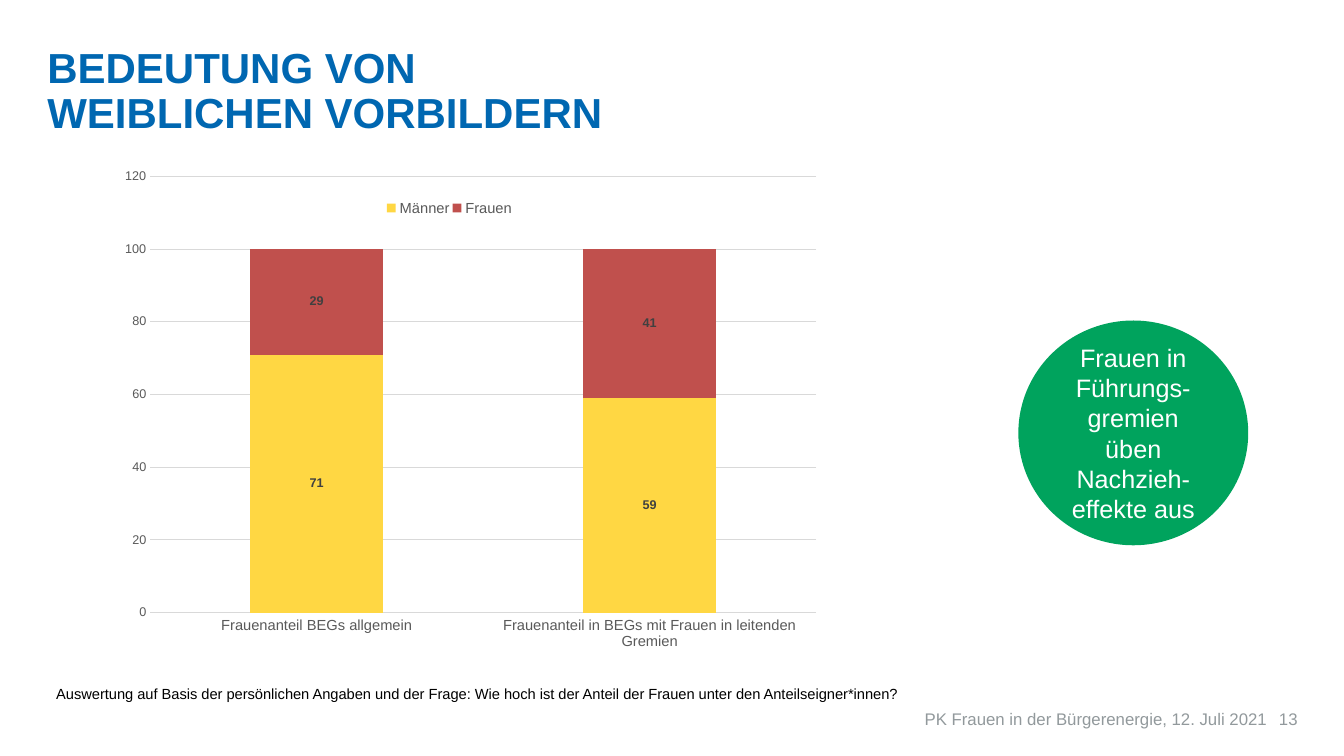
from lxml import etree
from pptx import Presentation
from pptx.chart.data import CategoryChartData
from pptx.dml.color import RGBColor
from pptx.enum import chart as charts, shapes, text
from pptx.oxml import ns
from pptx.util import Inches, Pt

BLUE = RGBColor(0x00, 0x67, 0xB1)
GREEN = RGBColor(0x00, 0xA3, 0x5D)
YELLOW = RGBColor(0xFF, 0xD7, 0x43)
RED = RGBColor(0xC0, 0x50, 0x4D)
BLACK = RGBColor(0x00, 0x00, 0x00)
WHITE = RGBColor(0xFF, 0xFF, 0xFF)
FOOTER_GREY = RGBColor(0x92, 0x99, 0x9C)
AXIS_GREY = RGBColor(0x59, 0x59, 0x59)
LABEL_GREY = RGBColor(0x40, 0x40, 0x40)
GRID_GREY = RGBColor(0xD9, 0xD9, 0xD9)

FONT = "Arial"
LEFT, CENTER, RIGHT = text.PP_ALIGN.LEFT, text.PP_ALIGN.CENTER, text.PP_ALIGN.RIGHT


def set_font(font, size, color, bold=False):
    for name, value in {"name": FONT, "size": Pt(size), "bold": bold}.items():
        setattr(font, name, value)
    font.color.rgb = color


def set_frame(frame, **values):
    for name, value in values.items():
        setattr(frame, name, value)


def write(frame, words, size, color, bold=False, align=LEFT):
    para = frame.paragraphs[0]
    para.text = words
    para.alignment = align
    for span in para.runs:
        set_font(span.font, size, color, bold)
    return para


def add_text(page, box, words, size, color, inset=True, **style):
    frame = page.shapes.add_textbox(*map(Inches, box)).text_frame
    frame.word_wrap = True
    if not inset:
        set_frame(frame, margin_left=0, margin_top=0, margin_right=0, margin_bottom=0)
    return frame, write(frame, words, size, color, **style)


def add_title(page, box):
    frame, para = add_text(page, box, "BEDEUTUNG VON \vWEIBLICHEN VORBILDERN",
                           30, BLUE, inset=False, bold=True)
    frame.vertical_anchor = text.MSO_ANCHOR.BOTTOM
    para.line_spacing = Pt(32)


def place_part(part, index, chart_box, box, inner=False):
    """Fix a chart part at a box given in inches inside the chart."""
    for old in part.findall(ns.qn("c:layout")):
        part.remove(old)
    layout = etree.Element(ns.qn("c:layout"))
    manual = etree.SubElement(layout, ns.qn("c:manualLayout"))
    settings = [("layoutTarget", "inner")] if inner else []
    settings += [("xMode", "edge"), ("yMode", "edge")]
    width, height = chart_box[2:]
    settings += [(key, f"{length / whole:.4f}") for key, length, whole
                 in zip("xywh", box, (width, height, width, height))]
    for tag, value in settings:
        etree.SubElement(manual, ns.qn(f"c:{tag}")).set("val", value)
    part.insert(index, layout)


def add_share_chart(page, box):
    data = CategoryChartData()
    data.categories = ["Frauenanteil BEGs allgemein",
                       "Frauenanteil in BEGs mit Frauen in leitenden Gremien"]
    data.add_series("Männer", (71, 59))
    data.add_series("Frauen", (29, 41))
    chart = page.shapes.add_chart(charts.XL_CHART_TYPE.COLUMN_STACKED,
                                  *map(Inches, box), data).chart
    set_font(chart.font, 10, BLACK)
    chart.has_title = False

    # Columns and value labels
    plot = chart.plots[0]
    set_frame(plot, gap_width=150, overlap=100, vary_by_categories=False)
    for series, color in zip(plot.series, (YELLOW, RED)):
        series.format.fill.solid()
        series.format.fill.fore_color.rgb = color
        series.data_labels.show_value = True
        set_font(series.data_labels.font, 9, LABEL_GREY, bold=True)

    # Axes and grid
    names, scale = chart.category_axis, chart.value_axis
    for axis, size in ((names, 10.5), (scale, 9)):
        axis.major_tick_mark = axis.minor_tick_mark = charts.XL_TICK_MARK.NONE
        set_font(axis.tick_labels.font, size, AXIS_GREY)
    set_frame(scale, minimum_scale=0, maximum_scale=120, major_unit=20,
              has_major_gridlines=True)
    scale.format.line.fill.background()
    for line in (names.format.line, scale.major_gridlines.format.line):
        line.color.rgb = GRID_GREY
        line.width = Pt(0.75)

    # Legend inside the plot
    chart.has_legend = True
    legend = chart.legend
    legend.position = charts.XL_LEGEND_POSITION.BOTTOM
    legend.include_in_layout = False
    set_font(legend.font, 10.5, AXIS_GREY)

    area = plot._element.getparent()
    place_part(area, 0, box, (0.3, 0.09, 6.61, 4.35), inner=True)
    place_part(legend._element, 1, box, (2.62, 0.28, 1.3, 0.25))


def add_message(page, box):
    circle = page.shapes.add_shape(shapes.MSO_SHAPE.OVAL, *map(Inches, box))
    circle.shadow.inherit = False
    circle.fill.solid()
    circle.fill.fore_color.rgb = GREEN
    circle.line.fill.background()
    set_frame(circle.text_frame, word_wrap=True,
              vertical_anchor=text.MSO_ANCHOR.MIDDLE)
    write(circle.text_frame, "Frauen in Führungs-gremien üben Nachzieh-effekte aus",
          18, WHITE, align=CENTER)


def add_footer(page, box):
    left, top, width, height = box
    number_width = 0.3
    split = width - number_width
    for words, start, part_width in (
            ("PK Frauen in der Bürgerenergie, 12. Juli 2021", 0, split),
            ("13", split, number_width)):
        add_text(page, (left + start, top, part_width, height), words,
                 12, FOOTER_GREY, inset=False, align=RIGHT)


def main():
    deck = Presentation()
    deck.slide_width, deck.slide_height = Inches(13.33), Inches(7.5)
    page = deck.slides.add_slide(deck.slide_layouts[6])
    add_footer(page, (7.28, 7.03, 5.59, 0.2))
    add_title(page, (0.47, 0.64, 8.07, 0.72))
    add_share_chart(page, (1.19, 1.66, 6.91, 4.79))
    add_text(page, (0.46, 6.74, 11.1, 0.28),
             "Auswertung auf Basis der persönlichen Angaben und der Frage: "
             "Wie hoch ist der Anteil der Frauen unter den Anteilseigner*innen?",
             10.5, BLACK)
    add_message(page, (10.1, 3.18, 2.28, 2.23))
    deck.save("out.pptx")


if __name__ == "__main__":
    main()
